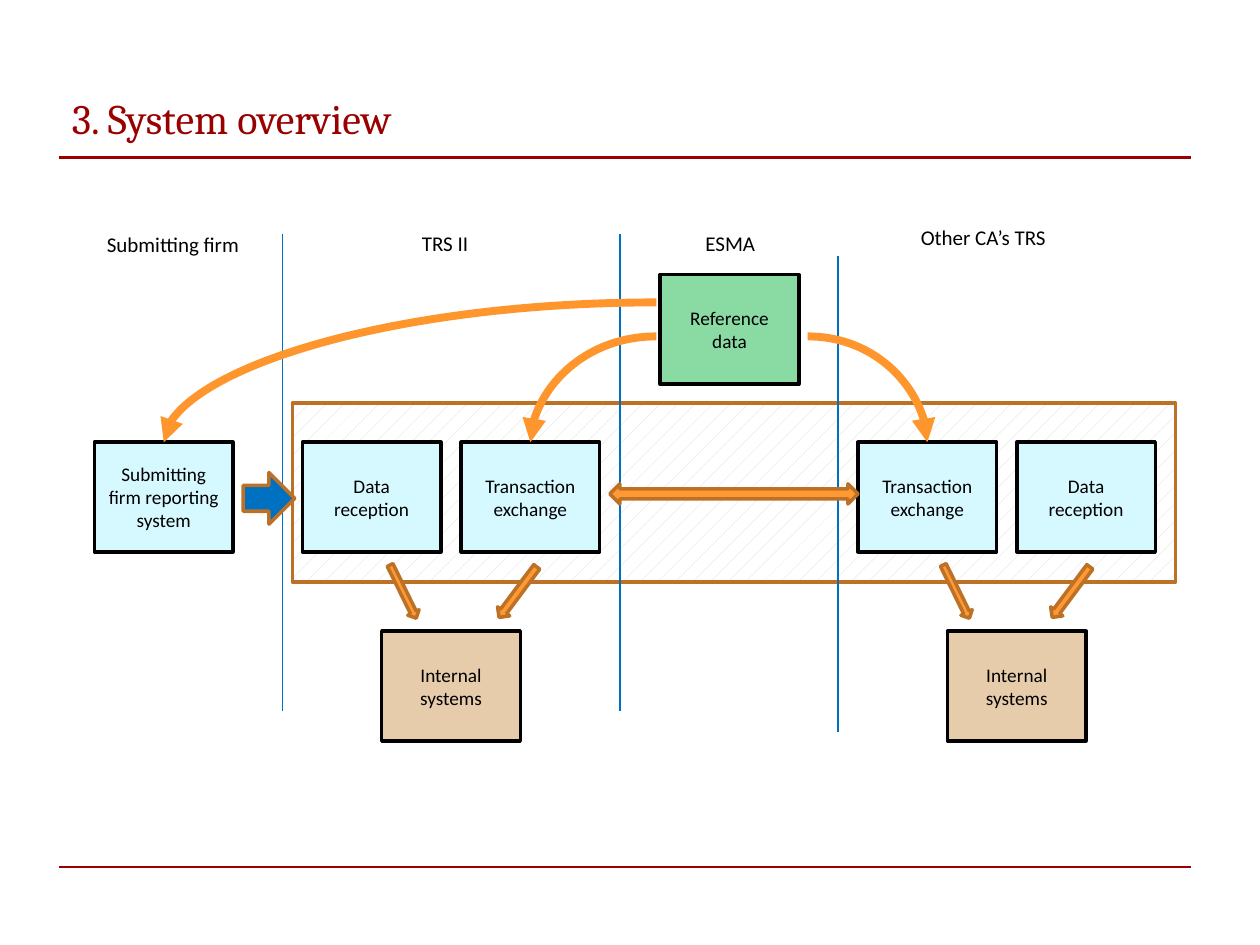
from dataclasses import dataclass

from lxml import etree
from pptx import Presentation
from pptx.dml.color import RGBColor
from pptx.enum import dml, shapes, text
from pptx.oxml.ns import qn

PX = 9144  # 100 px to the inch
SHAPE = shapes.MSO_SHAPE
LINK = shapes.MSO_CONNECTOR
BOX_W, BOX_H = 110, 87
ROW = 351


@dataclass(frozen=True)
class Theme:
    red: str = "990000"
    blue: str = "0070C0"
    black: str = "000000"
    white: str = "FFFFFF"
    grey: str = "D9D9D9"
    cyan: str = "D6F8FF"
    green: str = "8ADAA3"
    tan: str = "E6CCAB"
    brown: str = "BD7126"
    orange: str = "FF9933"
    curve: str = "FE962D"
    head: str = "Cambria"
    body: str = "Calibri"
    title: int = 24
    label: int = 12
    box: int = 11


THEME = Theme()


def rgb(code):
    return RGBColor.from_string(code)


def place(*sizes):
    return [size * PX for size in sizes]


def style(frame, face, size, color, align=None):
    for para in frame.paragraphs:
        para.alignment = align
        for run in para.runs:
            run.font.name = face
            run.font.size = size * 12700
            run.font.color.rgb = rgb(color)


def add_title(slide, words):
    title = slide.shapes.title
    title.left, title.top, title.width, title.height = place(47, 59, 900, 69)
    frame = title.text_frame
    frame.text = words
    frame.vertical_anchor = text.MSO_ANCHOR.MIDDLE
    style(frame, THEME.head, THEME.title, THEME.red, text.PP_ALIGN.LEFT)


def add_line(slide, ends, color, width, kind=LINK.STRAIGHT):
    line = slide.shapes.add_connector(kind, *place(*ends))
    line.line.color.rgb = rgb(color)
    line.line.width = int(width * 12700)
    etree.SubElement(line._element.spPr, qn("a:effectLst"))
    return line


def add_curve(slide, ends):
    """Quarter curve that leaves sideways and arrives downwards with an arrowhead."""
    curve = add_line(slide, ends, THEME.curve, 4.5, LINK.CURVE)
    curve._element.spPr.find(qn("a:prstGeom")).set("prst", "curvedConnector2")
    etree.SubElement(curve.line._get_or_add_ln(), qn("a:tailEnd"), type="triangle")


def add_form(slide, kind, area, fill, edge, turn=0):
    form = slide.shapes.add_shape(kind, *place(*area))
    form.shadow.inherit = False
    form.fill.solid()
    form.fill.fore_color.rgb = rgb(fill)
    form.line.color.rgb = rgb(edge)
    form.line.width = 2 * 12700
    form.rotation = turn
    return form


def add_frame(slide, area):
    form = add_form(slide, SHAPE.RECTANGLE, area, THEME.white, THEME.brown)
    form.fill.patterned()
    form.fill.pattern = dml.MSO_PATTERN.PERCENT_5
    form.fill.fore_color.rgb = rgb(THEME.grey)
    form.fill.back_color.rgb = rgb(THEME.white)


def add_box(slide, left, top, fill, words):
    box = add_form(slide, SHAPE.RECTANGLE, (left, top, BOX_W, BOX_H), fill, THEME.black)
    frame = box.text_frame
    frame.text = words
    frame.word_wrap = True
    frame.vertical_anchor = text.MSO_ANCHOR.MIDDLE
    style(frame, THEME.body, THEME.box, THEME.black, text.PP_ALIGN.CENTER)


def add_label(slide, left, top, width, words):
    frame = slide.shapes.add_textbox(*place(left, top, width, 30)).text_frame
    frame.text = words
    frame.word_wrap = False
    frame.auto_size = text.MSO_AUTO_SIZE.SHAPE_TO_FIT_TEXT
    style(frame, THEME.body, THEME.label, THEME.black)


def main():
    deck = Presentation()
    deck.slide_width, deck.slide_height = place(1000, 750)
    slide = deck.slides.add_slide(deck.slide_layouts[5])

    for y in (125, 688):
        add_line(slide, (47, y, 945, y), THEME.red, 1.25)
    add_title(slide, "3. System overview")
    add_frame(slide, (232, 320, 701, 142))

    for x, top in ((224, 186), (492, 186), (665, 203)):
        add_line(slide, (x, top, x, top + 378), THEME.blue, 0.75)

    for label in (
        (75, 179, 126, "Submitting firm"),
        (325, 178, 57, "TRS II"),
        (550, 178, 60, "ESMA"),
        (721, 173, 121, "Other CA’s TRS"),
    ):
        add_label(slide, *label)

    for left, words in (
        (75, "Submitting firm reporting system"),
        (240, "Data reception"),
        (366, "Transaction exchange"),
        (681, "Transaction\nexchange"),
        (807, "Data reception"),
    ):
        add_box(slide, left, ROW, THEME.cyan, words)
    add_box(slide, 524, 218, THEME.green, "Reference data")
    for left in (303, 752):
        add_box(slide, left, 501, THEME.tan, "Internal systems")

    for ends in ((521, 240, 130, ROW), (521, 267, 421, ROW), (641, 267, 736, ROW)):
        add_curve(slide, ends)

    for shift in (0, 439):
        for area, turn in (((315 + shift, 446, 10, 47), 333.9),
                           ((405 + shift, 445, 12, 50), 36.7)):
            add_form(slide, SHAPE.DOWN_ARROW, area, THEME.orange, THEME.brown, turn)
    add_form(slide, SHAPE.DOWN_ARROW, (193, 375, 41, 41), THEME.blue, THEME.brown, 270)
    add_form(slide, SHAPE.LEFT_RIGHT_ARROW, (484, 384, 197, 16), THEME.orange, THEME.brown)

    deck.save("out.pptx")


if __name__ == "__main__":
    main()
